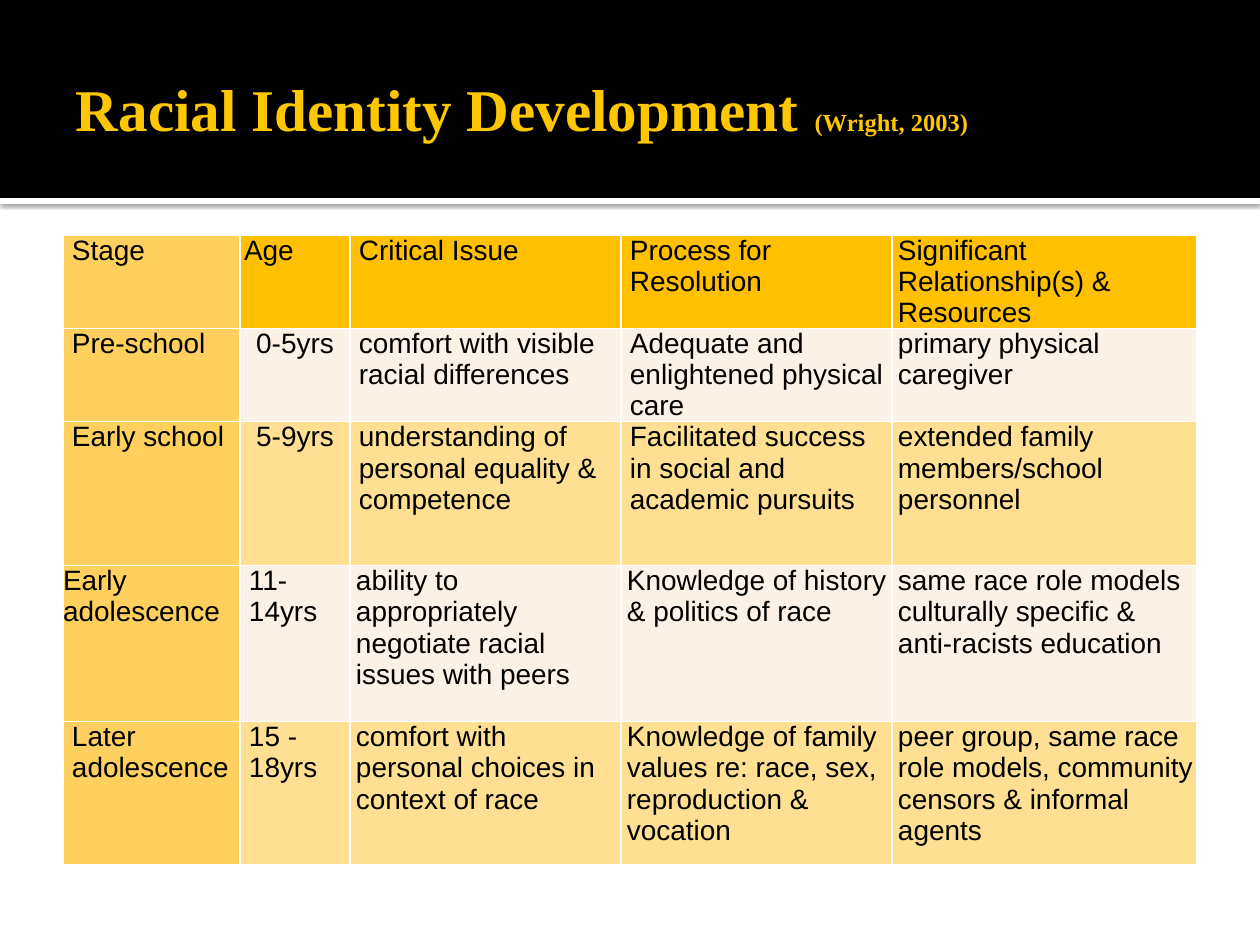
from dataclasses import dataclass
from typing import NamedTuple

from lxml.etree import SubElement as Sub
from pptx import Presentation
from pptx.dml.color import RGBColor as RGB
from pptx.enum.shapes import MSO_SHAPE as Shape
from pptx.enum.text import MSO_ANCHOR as Anchor, PP_ALIGN as Align
from pptx.oxml.ns import qn
from pptx.util import Pt

SCALE = 914400 / 126  # EMU in one px


@dataclass(frozen=True)
class Theme:
    black: str = "000000"
    white: str = "FFFFFF"
    title: str = "FFC700"
    head: str = "FFC000"
    stage: str = "FFD05D"
    pale: str = "FCF1E6"
    warm: str = "FFE093"
    serif: str = "Times New Roman"
    sans: str = "Arial"
    big: float = 33.8
    small: float = 14
    body: float = 16


class Box(NamedTuple):
    left: int
    top: int
    width: int
    height: int


class Band(NamedTuple):
    box: Box
    fill: str
    shade: bool


class Row(NamedTuple):
    height: int
    cells: tuple[str, ...]  # a line break starts a new paragraph


THEME = Theme()
BANDS = (
    Band(Box(0, 198, 1260, 6), THEME.white, True),
    Band(Box(0, 0, 1260, 198), THEME.black, False),
)
COLS = (177, 110, 271, 271, 305)
ROWS = (
    Row(93, ("Stage", "Age", "Critical Issue", "Process for\nResolution",
             "Significant\nRelationship(s) & Resources")),
    Row(93, ("Pre-school", "0-5yrs",
             "comfort with visible\nracial differences",
             "Adequate and\nenlightened physical\ncare",
             "primary physical\ncaregiver")),
    Row(144, ("Early school", "5-9yrs",
              "understanding of\npersonal equality &\ncompetence",
              "Facilitated success\nin social and\nacademic pursuits",
              "extended family\nmembers/school personnel")),
    Row(156, ("Early adolescence", "11- 14yrs",
              "ability to appropriately\n"
              "negotiate racial issues with peers",
              "Knowledge of history & politics of race",
              "same race role models culturally specific &\n"
              "anti-racists education")),
    Row(143, ("Later adolescence", "15 - 18yrs",
              "comfort with personal choices in context of race",
              "Knowledge of family values re: race, sex, "
              "reproduction & vocation",
              "peer group, same race role models, community "
              "censors & informal agents")),
)


def px(num: int) -> int:
    return round(num * SCALE)


def place(shape, box: Box) -> None:
    shape.left, shape.top, shape.width, shape.height = map(px, box)


def add_run(para, text: str, face: str, size: float, tint: str,
            bold: bool = False) -> None:
    run = para.add_run()
    run.text = text
    font = run.font
    font.name, font.size, font.bold = face, Pt(size), bold
    font.color.rgb = RGB.from_string(tint)


def add_tint(parent, tint: str):
    return Sub(parent, qn("a:srgbClr"), val=tint)


def add_band(slide, band: Band) -> None:
    shape = slide.shapes.add_shape(Shape.RECTANGLE, *map(px, band.box))
    shape.shadow.inherit = False
    shape.fill.solid()
    shape.fill.fore_color.rgb = RGB.from_string(band.fill)
    shape.line.fill.background()
    if band.shade:
        effects = shape._element.spPr.find(qn("a:effectLst"))
        shadow = Sub(effects, qn("a:outerShdw"), blurRad=str(Pt(2.5)),
                     dist=str(Pt(0.8)), dir="5400000", rotWithShape="0")
        Sub(add_tint(shadow, THEME.black), qn("a:alpha"), val="60000")


def set_title(slide) -> None:
    title = slide.shapes.title
    place(title, Box(63, 21, 1134, 173))
    frame = title.text_frame
    frame.word_wrap = True
    frame.vertical_anchor = Anchor.MIDDLE
    frame.margin_left = px(13)
    frame.margin_right = frame.margin_top = frame.margin_bottom = px(6)
    para = frame.paragraphs[0]
    para.alignment = Align.LEFT
    for text, size in (("Racial Identity Development ", THEME.big),
                       ("(Wright, 2003)", THEME.small)):
        add_run(para, text, THEME.serif, size, THEME.title, True)
    slide.shapes._spTree.append(title._element)  # in front of the bands


def indent(row: int, col: int) -> int:
    if (row, col) == (0, 1):
        return 4
    if (row, col) == (3, 0):
        return 0
    return 6 if col == 4 or (col > 1 and row > 2) else 9


def tint_of(row: int, col: int) -> str:
    if col == 0:
        return THEME.stage
    if row == 0:
        return THEME.head
    return THEME.pale if row % 2 else THEME.warm


def add_edges(cell) -> None:
    props = cell._tc.get_or_add_tcPr()
    for spot, side in enumerate("LRTB"):
        edge = Sub(props, qn(f"a:ln{side}"), w=str(Pt(1)))
        add_tint(Sub(edge, qn("a:solidFill")), THEME.white)
        props.insert(spot, edge)  # edges come before the fill


def fill_cell(cell, text: str, row: int, col: int) -> None:
    cell.margin_left = cell.margin_right = 0
    cell.margin_top = cell.margin_bottom = 0
    cell.vertical_anchor = Anchor.TOP
    cell.fill.solid()
    cell.fill.fore_color.rgb = RGB.from_string(tint_of(row, col))
    add_edges(cell)
    frame = cell.text_frame
    for spot, line in enumerate(text.split("\n")):
        para = frame.add_paragraph() if spot else frame.paragraphs[0]
        if col == 1 and row in (1, 2):
            para.alignment = Align.CENTER
        else:
            para._p.get_or_add_pPr().set("marL", str(px(indent(row, col))))
        add_run(para, line, THEME.sans, THEME.body, THEME.black)


def add_grid(slide) -> None:
    box = Box(63, 235, sum(COLS), sum(row.height for row in ROWS))
    table = slide.shapes.add_table(len(ROWS), len(COLS),
                                   *map(px, box)).table
    for col, width in zip(table.columns, COLS):
        col.width = px(width)
    for r, row in enumerate(ROWS):
        table.rows[r].height = px(row.height)
        for c, text in enumerate(row.cells):
            fill_cell(table.cell(r, c), text, r, c)


def main() -> None:
    deck = Presentation()
    deck.slide_width, deck.slide_height = px(1260), px(945)
    slide = deck.slides.add_slide(deck.slide_layouts[5])
    # Header
    for band in BANDS:
        add_band(slide, band)
    set_title(slide)
    # Stages of development
    add_grid(slide)
    deck.save("out.pptx")


if __name__ == "__main__":
    main()
